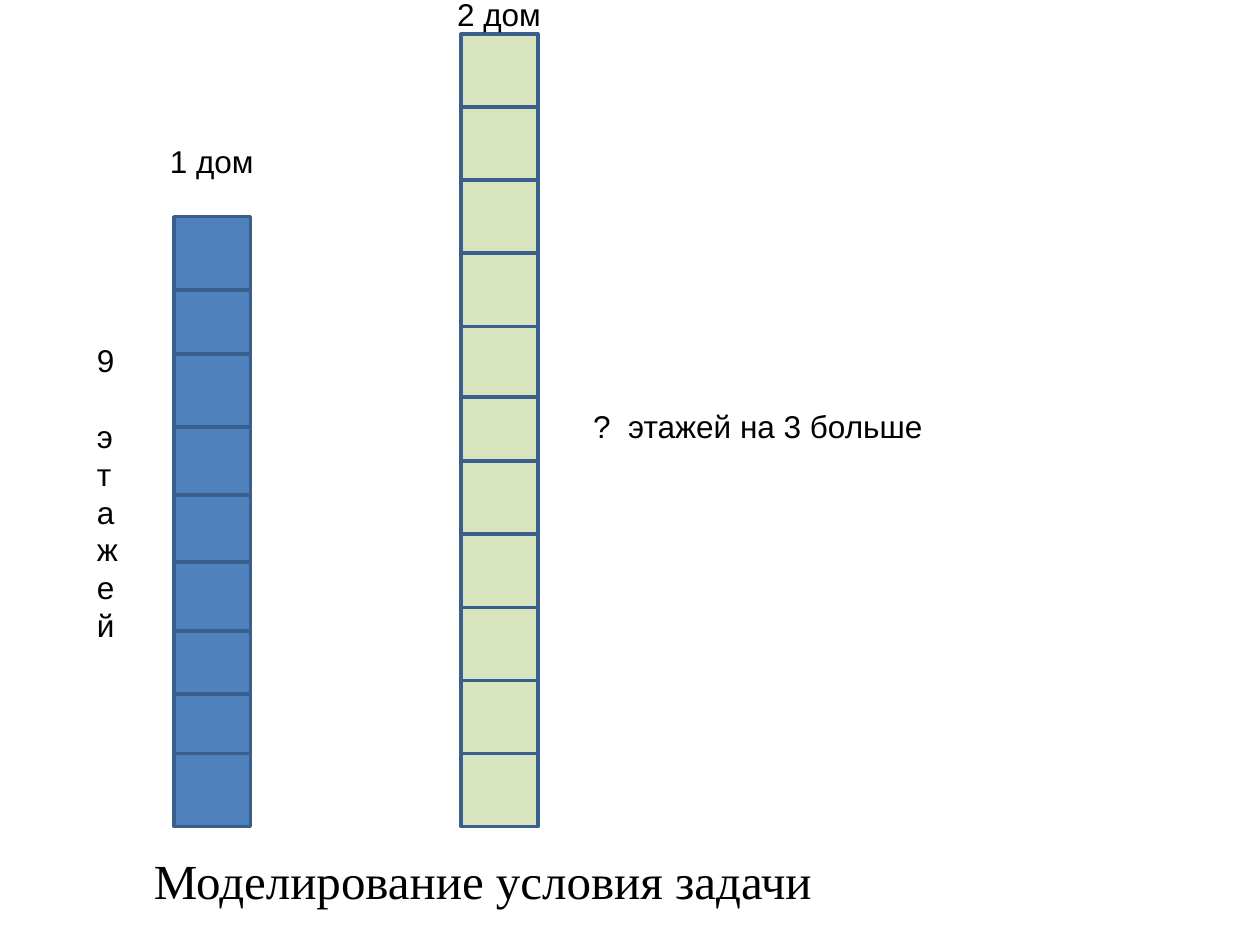
"""Build the slide that models a word problem about the floors of two houses."""
from pptx import Presentation
from pptx.dml.color import RGBColor
from pptx.enum import shapes, text
from pptx.util import Pt

COLORS = {"house_1": "4F81BD", "house_2": "D7E4BD", "outline": "3A5F8C", "ink": "000000"}
FLOOR_WIDTH, FLOOR_HEIGHT = 43.92, 41.76
GROUND_TOP = 430.56

deck = Presentation()
deck.slide_width, deck.slide_height = Pt(720), Pt(540)
slide = deck.slides.add_slide(deck.slide_layouts[6])


def add_floor(left, top, color):
    floor = slide.shapes.add_shape(
        shapes.MSO_SHAPE.RECTANGLE, Pt(left), Pt(top), Pt(FLOOR_WIDTH), Pt(FLOOR_HEIGHT))
    floor.shadow.inherit = False
    floor.fill.solid()
    floor.fill.fore_color.rgb = RGBColor.from_string(COLORS[color])
    floor.line.color.rgb = RGBColor.from_string(COLORS["outline"])
    floor.line.width = Pt(2)


def add_label(lines, left, top, width, height, wrap=True, size=18, font="Arial", gap=0):
    frame = slide.shapes.add_textbox(Pt(left), Pt(top), Pt(width), Pt(height)).text_frame
    frame.word_wrap = wrap
    frame.auto_size = text.MSO_AUTO_SIZE.SHAPE_TO_FIT_TEXT
    for index, line in enumerate(lines):
        paragraph = frame.add_paragraph() if index else frame.paragraphs[0]
        paragraph.space_before = Pt(gap if index else 0)
        run = paragraph.add_run()
        run.text = line
        run.font.size = Pt(size)
        run.font.name = font
        run.font.color.rgb = RGBColor.from_string(COLORS["ink"])
    return frame


title = add_label(["Моделирование условия задачи "], 30.96, 486, 496.8, 33.84,
                  size=28, font="Times New Roman")
title.margin_left = title.margin_right = title.margin_top = title.margin_bottom = 0
title.vertical_anchor = text.MSO_ANCHOR.MIDDLE
title.paragraphs[0].alignment = text.PP_ALIGN.CENTER

for top in (388.8, 354.96, 318.96, 279.36, 241.2, 202.32, 160.56, GROUND_TOP, 123.84):
    add_floor(99.36, top, "house_1")

lower_floors = [GROUND_TOP - FLOOR_HEIGHT * level for level in range(6)]
upper_floors = [144.72 - FLOOR_HEIGHT * level for level in range(4)]
for top in lower_floors + [185.04] + upper_floors:
    add_floor(263.52, top, "house_2")

add_label(["9", "этажей"], 48.24, 191.52, 25.92, 181.44, gap=21.6)
add_label(["?  этажей на 3 больше"], 331.92, 228.96, 351.36, 28.8)
add_label(["1 дом"], 90, 77.76, 62.64, 28.8, wrap=False)
add_label(["2 дом"], 254.16, -6.48, 62.64, 28.8, wrap=False)

deck.save("out.pptx")
